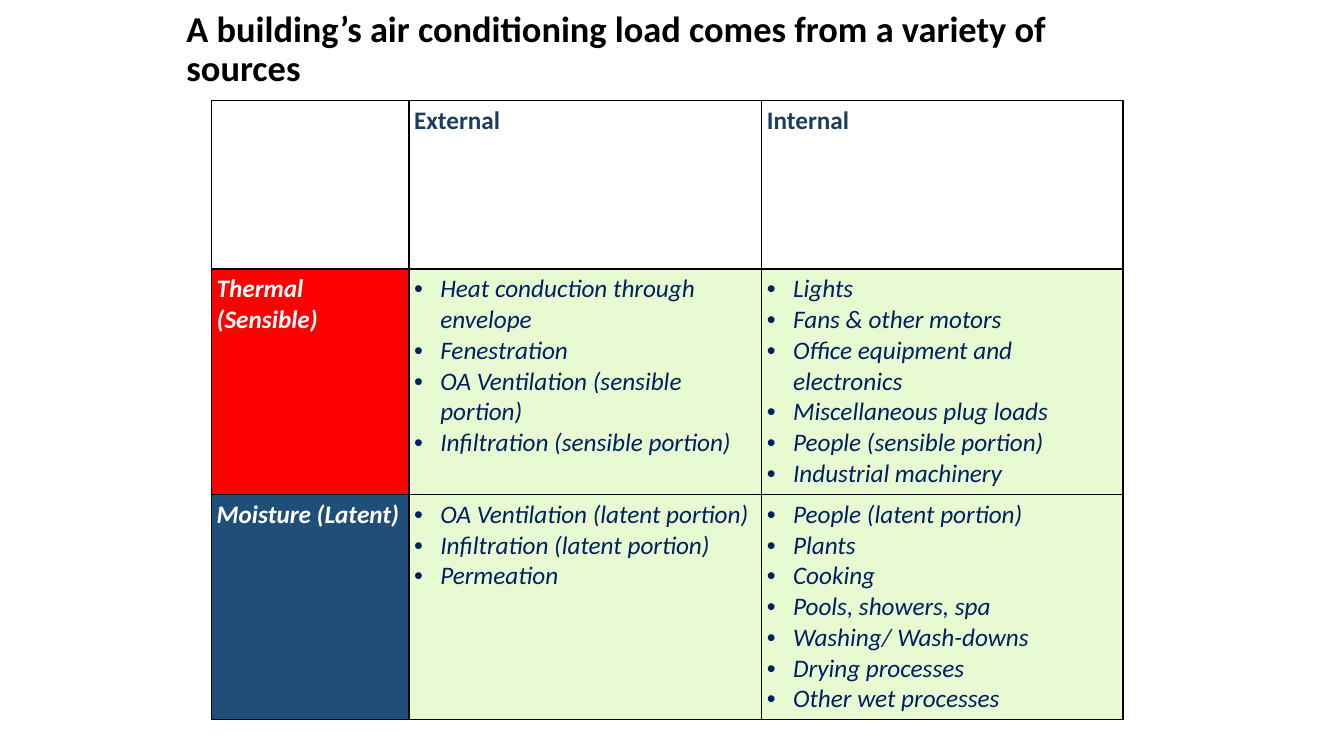
from lxml import etree
from pptx import Presentation
from pptx.dml.color import RGBColor
from pptx.enum.text import MSO_ANCHOR, MSO_AUTO_SIZE, PP_ALIGN
from pptx.oxml.ns import qn
from pptx.util import Inches, Pt

MIDDLE = MSO_ANCHOR.MIDDLE
NO_FIT = MSO_AUTO_SIZE.NONE
LEFT = PP_ALIGN.LEFT

WHITE, BLACK, NAVY, SLATE = "FFFFFF", "000000", "002060", "1A3E5F"
RED, BLUE, PALE_GREEN = "FF0000", "1F4E79", "E8FAD2"

TITLE = "A building’s air conditioning load comes from a variety of sources"
HEADINGS = ["", "External", "Internal"]
LOADS = [
    ("Thermal (Sensible)", RED,
     ["Heat conduction through envelope", "Fenestration",
      "OA Ventilation (sensible portion)", "Infiltration (sensible portion)"],
     ["Lights", "Fans & other motors", "Office equipment and electronics",
      "Miscellaneous plug loads", "People (sensible portion)",
      "Industrial machinery"]),
    ("Moisture (Latent)", BLUE,
     ["OA Ventilation (latent portion)", "Infiltration (latent portion)",
      "Permeation"],
     ["People (latent portion)", "Plants", "Cooking", "Pools, showers, spa",
      "Washing/ Wash-downs", "Drying processes", "Other wet processes"]),
]


def color(value):
    return RGBColor.from_string(value)


class Page:
    """One slide on a grid of 160 columns by 90 rows."""

    font = "Calibri"
    text_size = 18
    indent = Inches(0.26)
    inset = Inches(0.05)

    def __init__(self, deck):
        self.slide = deck.slides.add_slide(deck.slide_layouts[5])
        self.unit = deck.slide_width / 160

    def grid(self, *counts):
        return [round(count * self.unit) for count in counts]

    def span(self, para, text, size, shade, bold=False, italic=False):
        span = para.add_run()
        span.text = text
        font = span.font
        font.name, font.size = self.font, Pt(size)
        font.bold, font.italic = bold, italic
        font.color.rgb = color(shade)

    def title(self, text, left, top, width, height):
        box = self.slide.shapes.title
        box.left, box.top, box.width, box.height = self.grid(left, top, width, height)
        frame = box.text_frame
        frame.word_wrap, frame.auto_size = True, NO_FIT
        frame.vertical_anchor = MIDDLE
        para = frame.paragraphs[0]
        para.alignment, para.line_spacing = LEFT, 0.9
        self.span(para, text, 26, BLACK, bold=True)

    def table(self, left, top, widths, heights):
        place = self.grid(left, top, sum(widths), sum(heights))
        table = self.slide.shapes.add_table(len(heights), len(widths), *place).table
        for column, width in zip(table.columns, self.grid(*widths)):
            column.width = width
        for row, height in zip(table.rows, self.grid(*heights)):
            row.height = height
        return table

    def cell(self, cell, lines, fill, shade, bold=False, italic=False,
             bullets=False, top=1, bottom=1):
        """Fill a cell; top and bottom are its border widths in points."""
        cell.margin_left = cell.margin_right = self.inset
        cell.margin_top = cell.margin_bottom = self.inset
        cell.fill.solid()
        cell.fill.fore_color.rgb = color(fill)
        self.borders(cell, {"lnL": 1, "lnR": 1, "lnT": top, "lnB": bottom})
        for number, line in enumerate(lines):
            frame = cell.text_frame
            para = frame.add_paragraph() if number else frame.paragraphs[0]
            if bullets:
                self.bullet(para, shade)
            self.span(para, line, self.text_size, shade, bold, italic)

    def borders(self, cell, widths):
        properties = cell._tc.get_or_add_tcPr()
        for position, (side, width) in enumerate(widths.items()):
            line = etree.Element(qn(f"a:{side}"), w=str(Pt(width)))
            fill = etree.SubElement(line, qn("a:solidFill"))
            etree.SubElement(fill, qn("a:srgbClr"), val=BLACK)
            properties.insert(position, line)

    def bullet(self, para, shade):
        properties = para._p.get_or_add_pPr()
        properties.set("marL", str(self.indent))
        properties.set("indent", str(-self.indent))
        tint = etree.SubElement(properties, qn("a:buClr"))
        etree.SubElement(tint, qn("a:srgbClr"), val=shade)
        etree.SubElement(properties, qn("a:buFont"), typeface="Arial")
        etree.SubElement(properties, qn("a:buChar"), char="•")


def main():
    deck = Presentation()
    deck.slide_width, deck.slide_height = Inches(40 / 3), Inches(7.5)
    page = Page(deck)
    page.title(TITLE, 21, 0, 117, 12)

    table = page.table(25.2, 12, [23.5, 42, 43], [20, 20, 20])
    for column, heading in enumerate(HEADINGS):
        page.cell(table.cell(0, column), [heading] if heading else [],
                  WHITE, SLATE, bold=True, bottom=1.5)
    for row, (name, fill, *sources) in enumerate(LOADS, start=1):
        top = 1.5 if row == 1 else 1
        page.cell(table.cell(row, 0), [name], fill, WHITE,
                  bold=True, italic=True, top=top)
        for column, lines in enumerate(sources, start=1):
            page.cell(table.cell(row, column), lines, PALE_GREEN, NAVY,
                      italic=True, bullets=True, top=top)
    deck.save("out.pptx")


if __name__ == "__main__":
    main()
